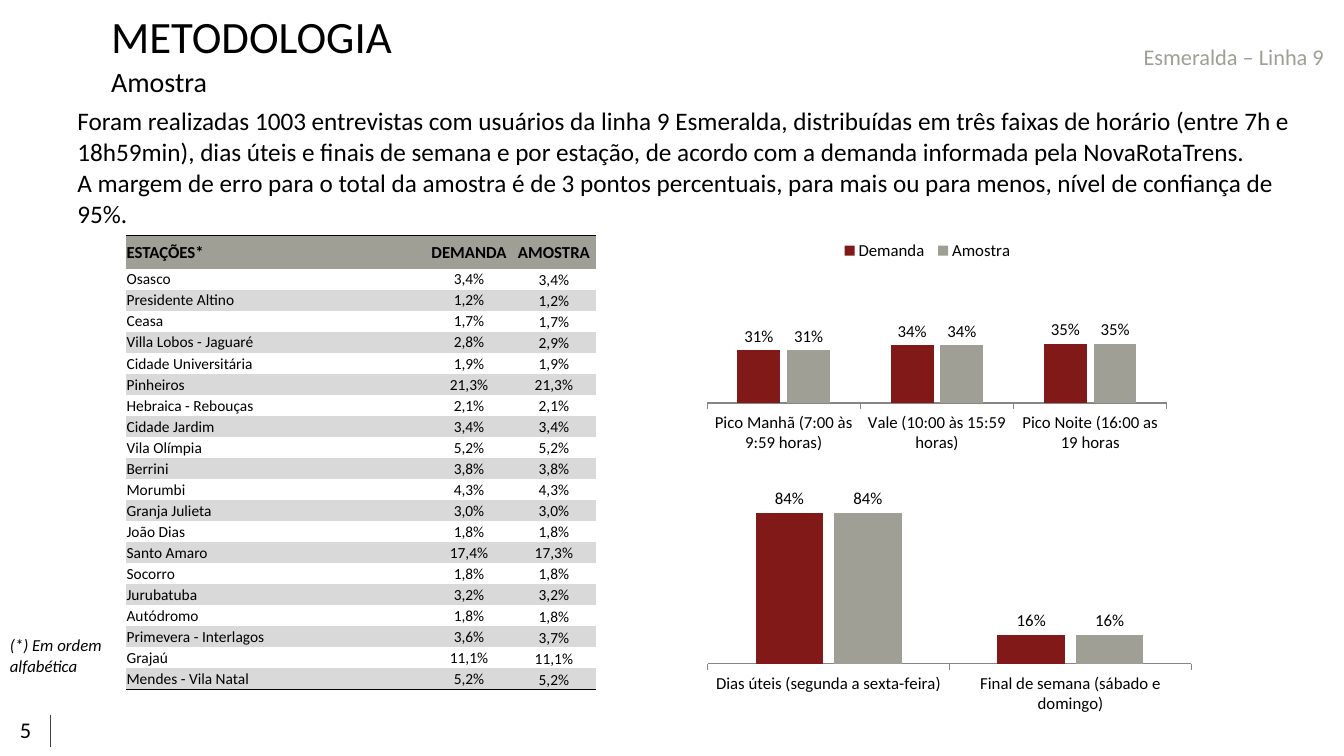
import lxml.etree
import pptx
import pptx.chart.data
import pptx.dml.color
import pptx.enum.chart
import pptx.enum.shapes
import pptx.enum.text
import pptx.oxml
import pptx.oxml.ns
import pptx.util

Cm = pptx.util.Cm
Pt = pptx.util.Pt
qn = pptx.oxml.ns.qn
FONT = "Calibri"
BLACK, RED, GRAY, BAND, DARK = "000000", "811919", "9F9F95", "D9D9D9", "404040"
NO_STYLE = "{2D5ABB26-0587-4C30-8999-92F81FD0307C}"

TITLE = [("METODOLOGIA", 32), ("Amostra", 20)]
INTRO = [
    ("Foram realizadas 1003 entrevistas com usuários da linha 9 Esmeralda, distribuídas em três "
     "faixas de horário (entre 7h e 18h59min), dias úteis e finais de semana e por estação, de "
     "acordo com a demanda informada pela NovaRotaTrens.", 18),
    ("A margem de erro para o total da amostra é de 3 pontos percentuais, para mais ou para menos, "
     "nível de confiança de 95%.", 18),
]
HEADER = ("ESTAÇÕES*", "DEMANDA", "AMOSTRA")
STATIONS = [
    ("Osasco", "3,4%", "3,4%"),
    ("Presidente Altino", "1,2%", "1,2%"),
    ("Ceasa", "1,7%", "1,7%"),
    ("Villa Lobos - Jaguaré", "2,8%", "2,9%"),
    ("Cidade Universitária", "1,9%", "1,9%"),
    ("Pinheiros", "21,3%", "21,3%"),
    ("Hebraica - Rebouças", "2,1%", "2,1%"),
    ("Cidade Jardim", "3,4%", "3,4%"),
    ("Vila Olímpia", "5,2%", "5,2%"),
    ("Berrini", "3,8%", "3,8%"),
    ("Morumbi", "4,3%", "4,3%"),
    ("Granja Julieta", "3,0%", "3,0%"),
    ("João Dias", "1,8%", "1,8%"),
    ("Santo Amaro", "17,4%", "17,3%"),
    ("Socorro", "1,8%", "1,8%"),
    ("Jurubatuba", "3,2%", "3,2%"),
    ("Autódromo", "1,8%", "1,8%"),
    ("Primevera - Interlagos", "3,6%", "3,7%"),
    ("Grajaú", "11,1%", "11,1%"),
    ("Mendes - Vila Natal", "5,2%", "5,2%"),
]
COLUMN_WIDTHS = (7.58, 2.14, 2.14)
HEADER_HEIGHT, ROW_HEIGHT = 0.84, 0.53
CHARTS = [
    {"place": (17.58, 4.88, 12.07, 6.68), "plot": (0.02, 0.15, 0.96, 0.64),
     "legend": (0.29, 0.17, 0.38, 0.09),
     "values": {"Pico Manhã (7:00 às 9:59 horas)": 31, "Vale (10:00 às 15:59 horas)": 34,
                "Pico Noite (16:00 as 19 horas": 35}},
    {"place": (17.58, 12.07, 12.7, 6.05), "plot": (0.02, 0.02, 0.96, 0.75), "legend": None,
     "values": {"Dias úteis (segunda a sexta-feira)": 84, "Final de semana (sábado e domingo)": 16}},
]


def color(value):
    return pptx.dml.color.RGBColor.from_string(value)


def style(font, size, tint=BLACK, bold=False, italic=False):
    font.name, font.size, font.bold, font.italic = FONT, Pt(size), bold, italic
    font.color.rgb = color(tint)


def add_text(page, place, lines, tint=BLACK, italic=False, wrap=True, margins=None):
    box = page.shapes.add_textbox(*map(Cm, place))
    frame = box.text_frame
    frame.word_wrap = wrap
    if margins:
        frame.margin_left, frame.margin_top, frame.margin_right, frame.margin_bottom = map(Cm, margins)
    frame.text = "\n".join(text for text, size in lines)
    for index, (para, (text, size)) in enumerate(zip(frame.paragraphs, lines)):
        if index:
            para.space_before = Pt(1)
        for span in para.runs:
            style(span.font, size, tint, italic=italic)


def add_border(cell, side):
    properties = cell._tc.get_or_add_tcPr()
    line = pptx.oxml.parse_xml(
        f'<a:{side} {pptx.oxml.ns.nsdecls("a")} w="12700"><a:solidFill>'
        f'<a:srgbClr val="{BLACK}"/></a:solidFill></a:{side}>')
    properties.insert(0, line)


def add_stations(page):
    rows = [HEADER] + STATIONS
    height = HEADER_HEIGHT + ROW_HEIGHT * len(STATIONS)
    frame = page.shapes.add_table(len(rows), len(HEADER), Cm(3.17), Cm(5.93),
                                  Cm(sum(COLUMN_WIDTHS)), Cm(height))
    table = frame.table
    table.horz_banding = False
    table._tbl.tblPr.find(qn("a:tableStyleId")).text = NO_STYLE
    for column, width in zip(table.columns, COLUMN_WIDTHS):
        column.width = Cm(width)
    for r, values in enumerate(rows):
        table.rows[r].height = Cm(ROW_HEIGHT if r else HEADER_HEIGHT)
        for c, value in enumerate(values):
            cell = table.cell(r, c)
            cell.margin_left = cell.margin_top = cell.margin_right = Cm(0.02)
            cell.margin_bottom = 0
            anchors = pptx.enum.text.MSO_ANCHOR
            cell.vertical_anchor = anchors.BOTTOM if r and c == 2 else anchors.MIDDLE
            cell.text_frame.text = value
            para = cell.text_frame.paragraphs[0]
            aligns = pptx.enum.text.PP_ALIGN
            para.alignment = aligns.CENTER if c else aligns.LEFT
            style(para.runs[0].font, 11 if r else 12, bold=r == 0)
            if r % 2 and r:
                cell.fill.background()
            else:
                cell.fill.solid()
                cell.fill.fore_color.rgb = color(BAND if r else GRAY)
            if r == 0:
                add_border(cell, "lnT")
            if r == len(rows) - 1:
                add_border(cell, "lnB")


def set_layout(parent, numbers, inner):
    layout = parent.find(qn("c:layout"))
    if layout is None:
        layout = lxml.etree.Element(qn("c:layout"))
        before = parent.find(qn("c:legendPos"))
        parent.insert(0 if before is None else parent.index(before) + 1, layout)
    manual = lxml.etree.SubElement(layout, qn("c:manualLayout"))
    settings = [("layoutTarget", "inner")] if inner else []
    settings += [("xMode", "edge"), ("yMode", "edge")]
    settings += zip("xywh", map(str, numbers))
    for name, value in settings:
        lxml.etree.SubElement(manual, qn("c:" + name)).set("val", value)


def add_columns(page, place, plot, legend, values):
    data = pptx.chart.data.CategoryChartData()
    data.categories = list(values)
    for name in ("Demanda", "Amostra"):
        data.add_series(name, list(values.values()))
    chart = page.shapes.add_chart(pptx.enum.chart.XL_CHART_TYPE.COLUMN_CLUSTERED,
                                  *map(Cm, place), data).chart
    style(chart.font, 12)
    chart.has_title = False
    set_layout(chart._chartSpace.chart.plotArea, plot, True)
    chart.has_legend = legend is not None
    if legend:
        chart.legend.position = pptx.enum.chart.XL_LEGEND_POSITION.TOP
        chart.legend.include_in_layout = False
        set_layout(chart._chartSpace.chart.find(qn("c:legend")), legend, False)
    scale = chart.value_axis
    scale.minimum_scale, scale.maximum_scale = 0, 100
    scale.has_major_gridlines = scale.visible = False
    chart.category_axis.format.line.color.rgb = color("868686")
    chart.category_axis.major_tick_mark = pptx.enum.chart.XL_TICK_MARK.OUTSIDE
    columns = chart.plots[0]
    columns.gap_width, columns.overlap, columns.vary_by_categories = 142, -16, False
    for series, tint in zip(columns.series, (RED, GRAY)):
        series.format.fill.solid()
        series.format.fill.fore_color.rgb = color(tint)
        labels = series.data_labels
        labels.show_value = True
        labels.number_format, labels.number_format_is_linked = '0"%"', False
        labels.position = pptx.enum.chart.XL_LABEL_POSITION.OUTSIDE_END
        style(labels.font, 12)


def main():
    deck = pptx.Presentation()
    deck.slide_width, deck.slide_height = Cm(33.87), Cm(19.05)
    page = deck.slides.add_slide(deck.slide_layouts[6])
    add_text(page, (0.25, 17.91, 1.42, 0.94), [("5", 16)])
    divider = page.shapes.add_connector(pptx.enum.shapes.MSO_CONNECTOR.STRAIGHT,
                                        Cm(1.27), Cm(18.01), Cm(1.27), Cm(18.82))
    divider.line.color.rgb = color(DARK)
    divider.line.width = Pt(0.5)
    lxml.etree.SubElement(divider._element.spPr, qn("a:effectLst"))
    add_text(page, (28.57, 0.97, 5.11, 0.94), [("Esmeralda – Linha 9", 16)], GRAY, wrap=False)
    add_text(page, (1.7, 2.54, 31.75, 3.38), INTRO)
    add_text(page, (2.77, 0.2, 25.37, 2.29), TITLE, margins=(0.03, 0.03, 0, 0))
    add_stations(page)
    add_text(page, (0, 15.88, 2.97, 1.27), [("(*) Em ordem alfabética", 12)], italic=True)
    for chart in CHARTS:
        add_columns(page, **chart)
    deck.save("out.pptx")


if __name__ == "__main__":
    main()
